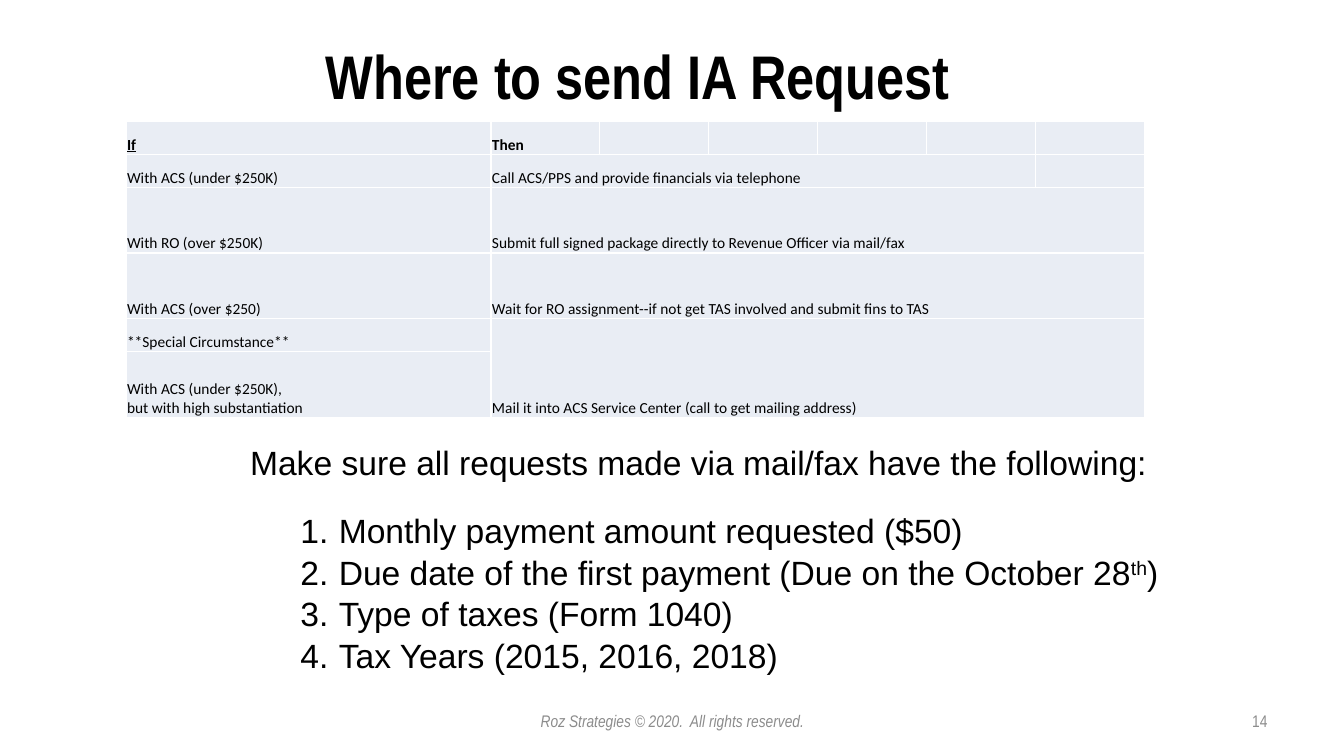
from lxml import etree
from pptx import Presentation
from pptx.dml.color import RGBColor
from pptx.enum.text import MSO_ANCHOR, MSO_AUTO_SIZE, PP_ALIGN
from pptx.oxml.ns import qn
from pptx.util import Inches, Pt

LEFT, CENTER, RIGHT = PP_ALIGN.LEFT, PP_ALIGN.CENTER, PP_ALIGN.RIGHT
TOP, MIDDLE, BOTTOM = MSO_ANCHOR.TOP, MSO_ANCHOR.MIDDLE, MSO_ANCHOR.BOTTOM
NO_AUTOFIT = MSO_AUTO_SIZE.NONE

COLORS = {"text": "000000", "muted": "8C8C8C", "cell": "E9EDF4", "border": "FFFFFF"}

COLUMN_WIDTHS = [3.62] + [1.08] * 6
ROW_HEIGHTS = [0.33, 0.33, 0.65, 0.65, 0.33, 0.65]
ROUTES = [
    ("If", "Then"),
    ("With ACS (under $250K)", "Call ACS/PPS and provide financials via telephone"),
    ("With RO (over $250K)", "Submit full signed package directly to Revenue Officer via mail/fax"),
    ("With ACS (over $250)", "Wait for RO assignment--if not get TAS involved and submit fins to TAS"),
    ("**Special Circumstance**", "Mail it into ACS Service Center (call to get mailing address)"),
    ("With ACS (under $250K),\nbut with high substantiation", ""),
]
MERGES = [(1, 1, 1, 5), (2, 1, 2, 6), (3, 1, 3, 6), (4, 1, 5, 6)]

INTRO = "Make sure all requests made via mail/fax have the following:"
REQUIREMENTS = [
    [("Monthly payment amount requested ($50)", 0)],
    [("Due date of the first payment (Due on the October 28", 0), ("th", 30), (")", 0)],
    [("Type of taxes (Form 1040)", 0)],
    [("Tax Years (2015, 2016, 2018)", 0)],
]


def add_text(para, text, font="Arial", size=24, color="text", bold=False,
             italic=False, underline=False, raised=0):
    for index, line in enumerate(text.split("\n")):
        if index:
            para.add_line_break()
        span = para.add_run()
        span.text = line
        span.font.name = font
        span.font.size = Pt(size)
        span.font.bold = bold
        span.font.italic = italic
        span.font.underline = underline
        span.font.color.rgb = RGBColor.from_string(COLORS[color])
        if raised:
            span.font._element.set("baseline", str(raised * 1000))


class SlideBuilder:
    narrow = "Arial Narrow"
    table_font = "Calibri"

    def __init__(self, deck):
        self.page = deck.slides.add_slide(deck.slide_layouts[1])

    def place(self, box, left, top, width, height, anchor):
        box.left, box.top = Inches(left), Inches(top)
        box.width, box.height = Inches(width), Inches(height)
        frame = box.text_frame
        frame.word_wrap = True
        frame.auto_size = NO_AUTOFIT
        frame.vertical_anchor = anchor
        return frame

    def title(self, text, *area):
        para = self.place(self.page.shapes.title, *area, MIDDLE).paragraphs[0]
        para.alignment = CENTER
        add_text(para, text, font=self.narrow, size=44, bold=True)

    def footer(self, text, *area, align=CENTER, italic=False):
        box = self.page.shapes.add_textbox(0, 0, 0, 0)
        para = self.place(box, *area, MIDDLE).paragraphs[0]
        para.alignment = align
        add_text(para, text, font=self.narrow, size=12, color="muted", italic=italic)

    def paragraph(self, para, bullet, margin, indent, before):
        para.alignment = LEFT
        para.line_spacing = 1.0
        para.space_before, para.space_after = Pt(before), Pt(0)
        properties = para._p.get_or_add_pPr()
        properties.set("marL", str(Inches(margin)))
        properties.set("indent", str(Inches(indent)))
        mark = etree.SubElement(properties, qn("a:" + bullet))
        if bullet == "buAutoNum":
            mark.set("type", "arabicPeriod")

    def numbered_list(self, intro, items, *area):
        frame = self.place(self.page.placeholders[1], *area, TOP)
        self.paragraph(frame.paragraphs[0], "buNone", 0, 0, 0)
        add_text(frame.paragraphs[0], intro)
        for index, item in enumerate(items):
            para = frame.add_paragraph()
            self.paragraph(para, "buAutoNum", 0.88, -0.38, 1 if index else 20)
            for text, raised in item:
                add_text(para, text, raised=raised)

    def border(self, cell):
        properties = cell._tc.get_or_add_tcPr()
        for position, side in enumerate(("lnL", "lnR", "lnT", "lnB")):
            line = etree.Element(qn("a:" + side), w=str(Pt(1)))
            fill = etree.SubElement(line, qn("a:solidFill"))
            etree.SubElement(fill, qn("a:srgbClr"), val=COLORS["border"])
            properties.insert(position, line)

    def table(self, rows, merges, left, top):
        grid = self.page.shapes.add_table(
            len(ROW_HEIGHTS), len(COLUMN_WIDTHS), Inches(left), Inches(top),
            Inches(sum(COLUMN_WIDTHS)), Inches(sum(ROW_HEIGHTS))).table
        grid.first_row = grid.horz_banding = False
        for column, width in zip(grid.columns, COLUMN_WIDTHS):
            column.width = Inches(width)
        for row, height in zip(grid.rows, ROW_HEIGHTS):
            row.height = Inches(height)
        for cell in grid.iter_cells():
            cell.margin_left = cell.margin_right = cell.margin_top = Inches(0.01)
            cell.margin_bottom = 0
            cell.vertical_anchor = BOTTOM
            cell.fill.solid()
            cell.fill.fore_color.rgb = RGBColor.from_string(COLORS["cell"])
            self.border(cell)
        for first_row, first_column, last_row, last_column in merges:
            grid.cell(first_row, first_column).merge(grid.cell(last_row, last_column))
        for row, texts in enumerate(rows):
            for column, text in enumerate(texts):
                if text:
                    add_text(grid.cell(row, column).text_frame.paragraphs[0], text,
                             font=self.table_font, size=11, bold=row == 0,
                             underline=row == 0 and column == 0)


def main():
    deck = Presentation()
    deck.slide_width, deck.slide_height = Inches(13.33), Inches(7.5)
    builder = SlideBuilder(deck)
    builder.title("Where to send IA Request", 2.08, 0.26, 8.5, 0.97)
    builder.footer("Roz Strategies © 2020.\u00a0 All rights reserved.".replace("\u00a0", " "),
                   4.56, 6.95, 4.22, 0.4, italic=True)
    builder.footer("14", 9.56, 6.95, 3.11, 0.4, align=RIGHT)
    builder.table(ROUTES, MERGES, 1.25, 1.2)
    builder.numbered_list(INTRO, REQUIREMENTS, 2.38, 4.33, 9.28, 2.42)
    deck.save("out.pptx")


if __name__ == "__main__":
    main()
